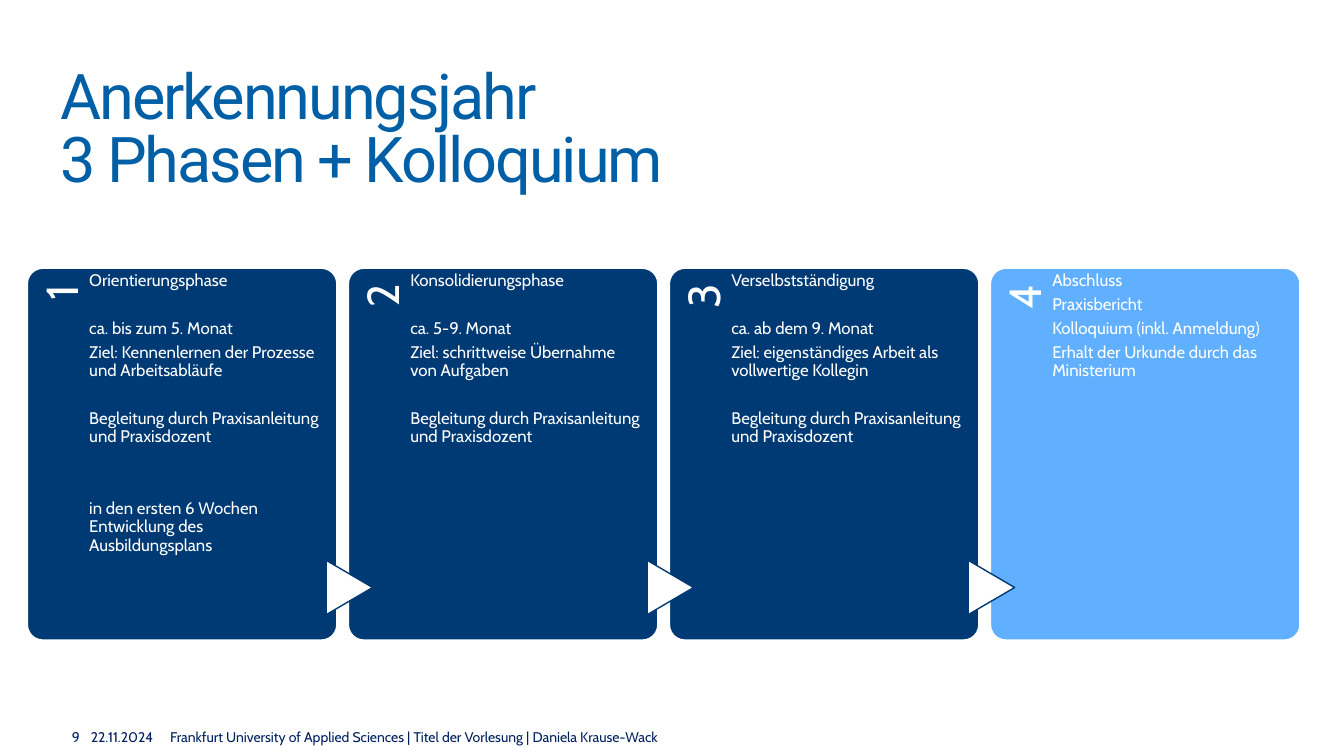
from pptx import Presentation
from pptx.dml.color import RGBColor
from pptx.enum.shapes import MSO_SHAPE
from pptx.enum.text import MSO_ANCHOR, MSO_AUTO_SIZE, PP_ALIGN
from pptx.util import Cm, Pt

NAVY, SKY, WHITE, INK, TITLE = "003A74", "61B0FF", "FFFFFF", "002060", "015FA6"
CARD_LEFT, CARD_TOP, CARD_W, CARD_H, PITCH = 0.69, 6.76, 7.8, 9.37, 8.09
GUIDE = "Begleitung durch Praxisanleitung und Praxisdozent"

# Each phase: card colour, then pairs of text and blank lines above it
PHASES = [
    (NAVY, [("Orientierungsphase", 0), ("ca. bis zum 5. Monat", 1),
            ("Ziel: Kennenlernen der Prozesse und Arbeitsabläufe", 0), (GUIDE, 1),
            ("in den ersten 6 Wochen Entwicklung des Ausbildungsplans", 2)]),
    (NAVY, [("Konsolidierungsphase", 0), ("ca. 5-9. Monat", 1),
            ("Ziel: schrittweise Übernahme von Aufgaben", 0), (GUIDE, 1)]),
    (NAVY, [("Verselbstständigung", 0), ("ca. ab dem 9. Monat", 1),
            ("Ziel: eigenständiges Arbeit als vollwertige Kollegin", 0), (GUIDE, 1)]),
    (SKY, [("Abschluss", 0), ("Praxisbericht", 0), ("Kolloquium (inkl. Anmeldung)", 0),
           ("Erhalt der Urkunde durch das Ministerium", 0)]),
]
FOOTER = [
    (0.28, 1.73, "9", PP_ALIGN.RIGHT),
    (2.29, 1.73, "22.11.2024", PP_ALIGN.LEFT),
    (4.29, 25.86, "Frankfurt University of Applied Sciences | Titel der Vorlesung | "
     "Daniela Krause-Wack", PP_ALIGN.LEFT),
]


def rgb(value):
    """Turn a hex string into a colour."""
    return RGBColor.from_string(value)


class Deck:
    """Hold the text style and the current slide."""

    font = "Cabin"
    gap = 17.1

    def __init__(self, s):
        """Keep the slide to draw on."""
        self.s = s

    def frame(self, tf, anchor, top=0, right=0):
        """Set wrapping, anchor and insets of a text frame."""
        tf.word_wrap = True
        tf.auto_size = MSO_AUTO_SIZE.NONE
        tf.vertical_anchor = anchor
        tf.margin_left = tf.margin_bottom = 0
        tf.margin_top, tf.margin_right = Cm(top), Cm(right)

    def title(self, text):
        """Fill and place the title placeholder."""
        sp = self.s.shapes.title
        sp.left, sp.top, sp.width, sp.height = Cm(1.52), Cm(1.75), Cm(27.4), Cm(1.35)
        self.frame(sp.text_frame, MSO_ANCHOR.TOP)
        p = sp.text_frame.paragraphs[0]
        p.text = text
        p.alignment, p.line_spacing = PP_ALIGN.LEFT, Pt(45)
        p.font.name, p.font.size, p.font.color.rgb = "Roboto", Pt(45), rgb(TITLE)
        for r in p.runs:
            r._r.get_or_add_rPr().set("spc", "-150")

    def text(self, x, y, w, h, lines, size, color, align=PP_ALIGN.LEFT,
             anchor=MSO_ANCHOR.TOP, top=0, right=0, spacing=0.9, after=0):
        """Add a text box from pairs of text and blank lines above."""
        sp = self.s.shapes.add_textbox(Cm(x), Cm(y), Cm(w), Cm(h))
        tf = sp.text_frame
        self.frame(tf, anchor, top, right)
        for i, (line, blanks) in enumerate(lines):
            p = tf.add_paragraph() if i else tf.paragraphs[0]
            p.text = line
            p.alignment, p.line_spacing, p.space_after = align, spacing, Pt(after)
            if blanks:
                p.space_before = Pt(blanks * self.gap)
            p.font.name, p.font.size, p.font.color.rgb = self.font, Pt(size), rgb(color)
        return sp

    def shape(self, kind, x, y, w, h, fill, line):
        """Add a filled and outlined preset shape."""
        sp = self.s.shapes.add_shape(kind, Cm(x), Cm(y), Cm(w), Cm(h))
        sp.shadow.inherit = False
        sp.fill.solid()
        sp.fill.fore_color.rgb = rgb(fill)
        sp.line.color.rgb = rgb(line)
        sp.line.width = Pt(1)
        return sp

    def phase(self, i, fill, lines):
        """Add a numbered card, with an arrow from the card before it."""
        x = CARD_LEFT + i * PITCH
        card = self.shape(MSO_SHAPE.ROUNDED_RECTANGLE, x, CARD_TOP, CARD_W, CARD_H, fill, WHITE)
        card.adjustments[0] = 0.05
        number = self.text(x - 3.06, 9.83, 7.7, 1.55, [(str(i + 1), 0)], 32, WHITE,
                           PP_ALIGN.RIGHT, top=0.3, right=0.41)
        number.rotation = 270
        if i:
            arrow = self.shape(MSO_SHAPE.FLOWCHART_EXTRACT, x - 0.66, 14.22, 1.37, 1.17,
                               WHITE, NAVY)
            arrow.rotation = 90
        self.text(x + 1.56, CARD_TOP, 5.82, CARD_H, lines, 12, WHITE, top=0.1, after=4.2)


def main():
    """Build and save the slide."""
    prs = Presentation()
    prs.slide_width, prs.slide_height = Cm(33.87), Cm(19.05)
    deck = Deck(prs.slides.add_slide(prs.slide_layouts[5]))
    deck.title("Anerkennungsjahr\v3 Phasen + Kolloquium")
    for i, (fill, lines) in enumerate(PHASES):
        deck.phase(i, fill, lines)
    for x, w, text, align in FOOTER:
        deck.text(x, 18.36, w, 0.41, [(text, 0)], 10, INK, align, MSO_ANCHOR.MIDDLE, spacing=1.0)
    prs.save("out.pptx")


if __name__ == "__main__":
    main()
